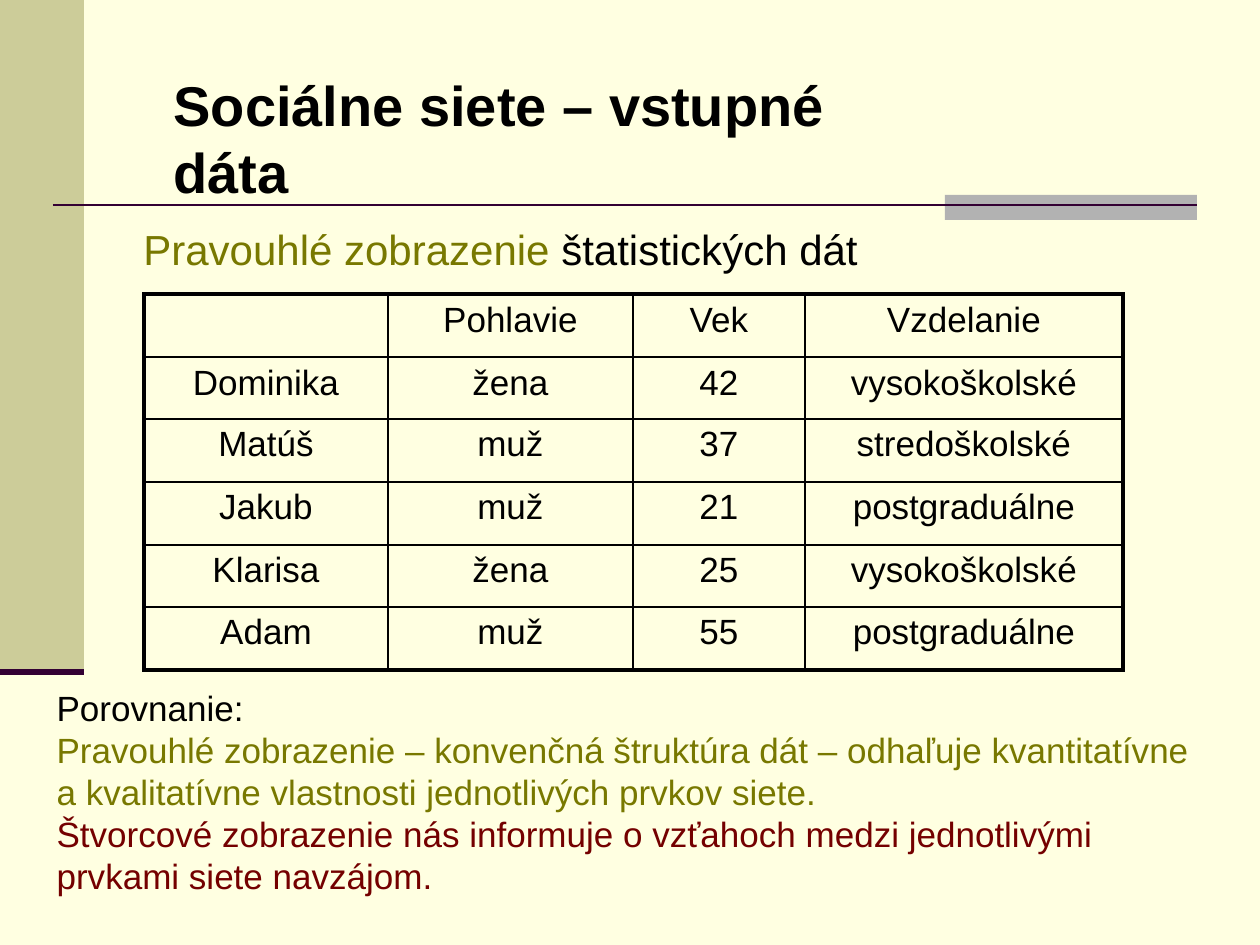
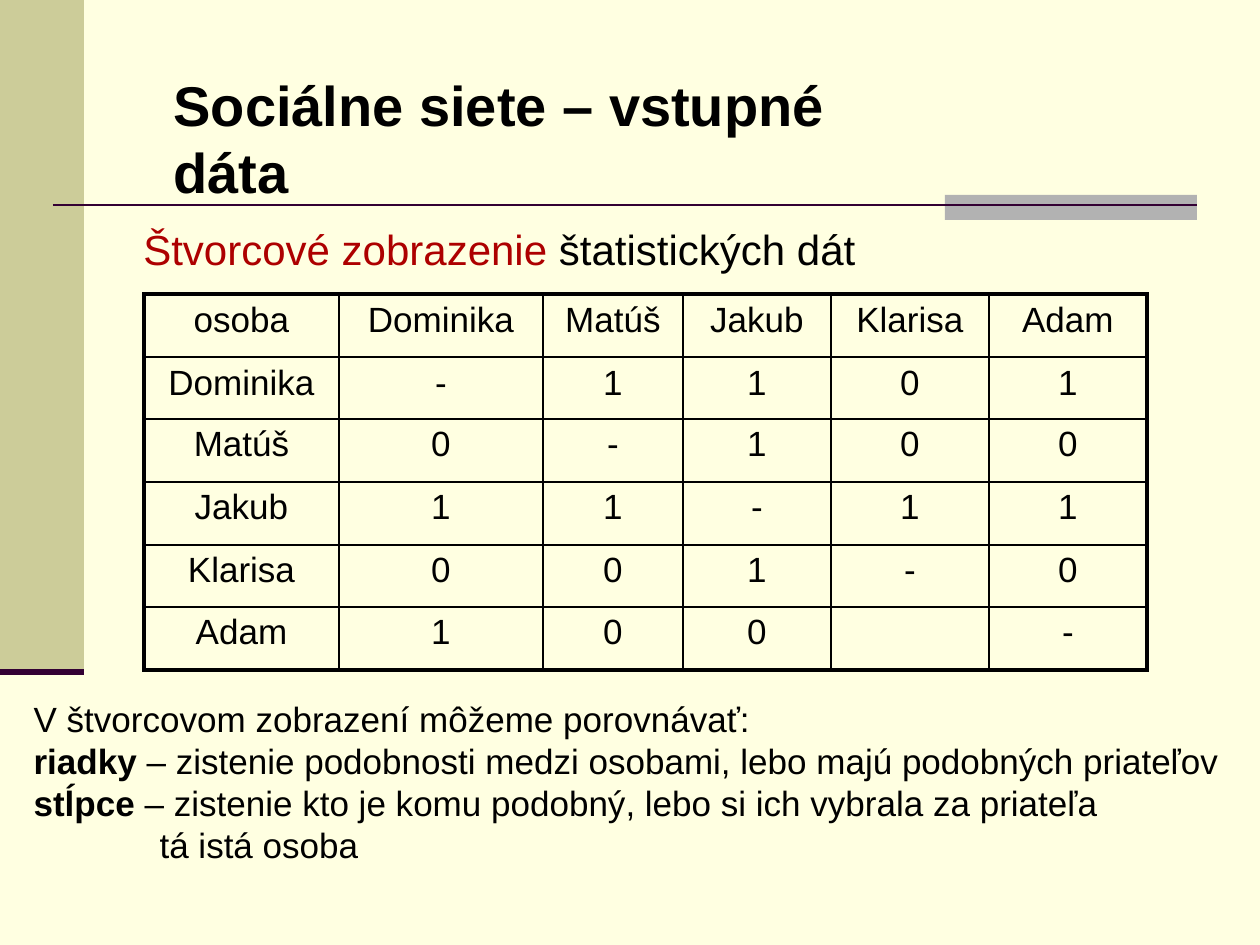
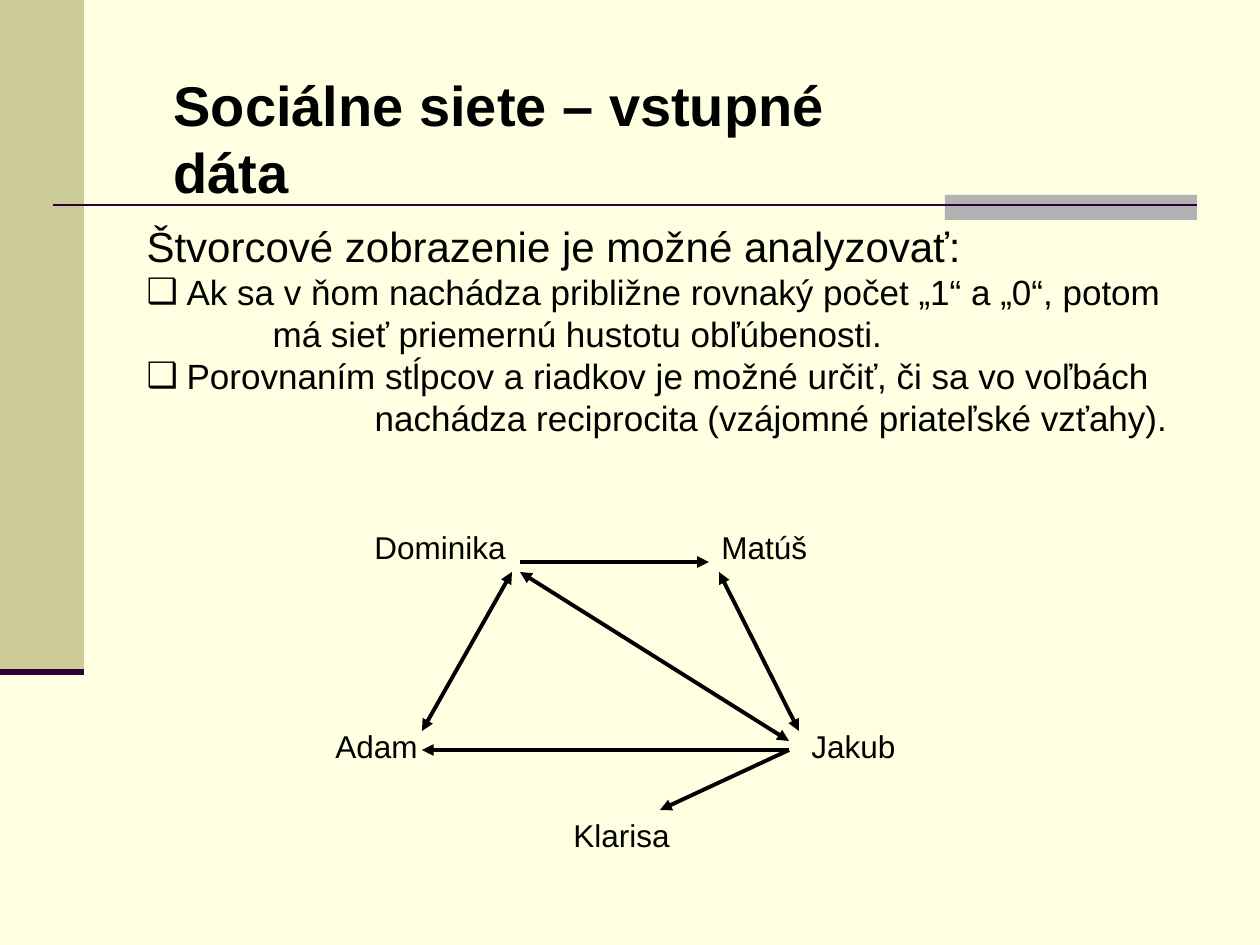
from lxml import etree
from pptx import Presentation
from pptx.dml.color import RGBColor
from pptx.enum.shapes import MSO_CONNECTOR, MSO_SHAPE
from pptx.enum.text import MSO_ANCHOR, MSO_AUTO_SIZE, PP_ALIGN
from pptx.oxml.ns import qn
from pptx.util import Emu, Pt

STRAIGHT = MSO_CONNECTOR.STRAIGHT
RECT = MSO_SHAPE.RECTANGLE
TOP = MSO_ANCHOR.TOP
NO_FIT = MSO_AUTO_SIZE.NONE
LEFT, CENTER = PP_ALIGN.LEFT, PP_ALIGN.CENTER

CREAM = RGBColor(0xFF, 0xFF, 0xE1)
KHAKI = RGBColor(0xCC, 0xCC, 0x99)
GREY = RGBColor(0xB2, 0xB2, 0xB2)
PLUM = RGBColor(0x33, 0x00, 0x33)
BLACK = RGBColor(0x00, 0x00, 0x00)
OLIVE = RGBColor(0x78, 0x78, 0x00)
RED = RGBColor(0xAD, 0x00, 0x00)
MAROON = RGBColor(0x74, 0x00, 0x00)

FONT = "Arial"
TITLE = "Sociálne siete – vstupné dáta"
TITLE_BOX = (161, 64, 805, 135)
SUBTITLE_BOX = (131, 217, 741, 63)
TABLE_AT = (144, 294)
ROW_HEIGHTS = (63, 62, 63, 63, 62, 63)
THICK, THIN = 2.25, 1


def px(n):
    return Emu(round(n * 914400 / 126))


def write(p, text, size=20, color=BLACK, bold=False):
    r = p.add_run()
    r.text = text
    r.font.name = FONT
    r.font.size = Pt(size)
    r.font.bold = bold
    r.font.color.rgb = color


def place(sp, box):
    sp.left, sp.top, sp.width, sp.height = map(px, box)


def prepare(tf, wrap=True):
    tf.word_wrap = wrap
    tf.auto_size = NO_FIT
    tf.vertical_anchor = TOP
    return tf


def fill_body(sp, box, paragraphs):
    place(sp, box)
    tf = prepare(sp.text_frame)
    for i, (runs, left, bullet) in enumerate(paragraphs):
        p = tf.add_paragraph() if i else tf.paragraphs[0]
        p.alignment = LEFT
        p.space_before = Pt(0)
        pPr = p._p.get_or_add_pPr()
        pPr.set("marL", str(px(left)))
        pPr.set("indent", str(px(-left if bullet else 0)))
        if bullet:
            etree.SubElement(pPr, qn("a:buChar")).set("char", bullet)
        else:
            etree.SubElement(pPr, qn("a:buNone"))
        for text, fmt in runs:
            write(p, text, **fmt)


def add_label(s, box, runs):
    tf = prepare(s.shapes.add_textbox(*map(px, box)).text_frame, wrap=False)
    for text, fmt in runs:
        write(tf.paragraphs[0], text, **fmt)


def add_line(s, x1, y1, x2, y2, color=BLACK, width=THICK, ends=()):
    sp = s.shapes.add_connector(STRAIGHT, px(x1), px(y1), px(x2), px(y2))
    sp.line.color.rgb = color
    sp.line.width = Pt(width)
    ln = sp.line._get_or_add_ln()
    for end in ends:
        etree.SubElement(ln, qn(f"a:{end}")).set("type", "triangle")
    etree.SubElement(sp._element.spPr, qn("a:effectLst"))
    return sp


def add_band(s, box, color):
    sp = s.shapes.add_shape(RECT, *map(px, box))
    sp.shadow.inherit = False
    sp.fill.solid()
    sp.fill.fore_color.rgb = color
    sp.line.fill.background()
    return sp


def decorate_layout(layout, s):
    layout.background.fill.solid()
    layout.background.fill.fore_color.rgb = CREAM
    parts = [
        add_band(s, (0, 0, 84, 672), KHAKI),
        add_band(s, (945, 195, 252, 25), GREY),
        add_line(s, 53, 205, 1197, 205, PLUM, 1.5),
        add_line(s, 0, 672, 84, 672, PLUM, 3.5),
    ]
    for i, sp in enumerate(parts, 20):
        sp.element.xpath(".//p:cNvPr")[0].set("id", str(i))
        layout.shapes.element.append(sp.element)


def add_titled_slide(prs, layout):
    s = prs.slides.add_slide(layout)
    place(s.shapes.title, TITLE_BOX)
    tf = prepare(s.shapes.title.text_frame)
    tf.margin_right = px(40)
    tf.paragraphs[0].alignment = LEFT
    write(tf.paragraphs[0], TITLE, size=32, bold=True)
    return s


def set_border(cell, side, width):
    tcPr = cell._tc.get_or_add_tcPr()
    ln = etree.SubElement(tcPr, qn(f"a:{side}"), w=str(Pt(width)))
    fill = etree.SubElement(ln, qn("a:solidFill"))
    etree.SubElement(fill, qn("a:srgbClr")).set("val", str(BLACK))


def add_grid(s, at, widths, rows):
    x, y = at
    box = (x, y, sum(widths), sum(ROW_HEIGHTS))
    table = s.shapes.add_table(len(rows), len(widths), *map(px, box)).table
    table.first_row = table.horz_banding = False
    for column, width in zip(table.columns, widths):
        column.width = px(width)
    for row, height in zip(table.rows, ROW_HEIGHTS):
        row.height = px(height)
    last_row, last_col = len(rows) - 1, len(widths) - 1
    for i, row in enumerate(rows):
        for j, text in enumerate(row):
            cell = table.cell(i, j)
            edges = {"lnL": j == 0, "lnR": j == last_col,
                     "lnT": i == 0, "lnB": i == last_row}
            for side, outer in edges.items():
                set_border(cell, side, THICK if outer else THIN)
            cell.fill.background()
            if text:
                p = cell.text_frame.paragraphs[0]
                p.alignment = CENTER
                p.space_before = Pt(4)
                write(p, text)


def add_table_slide(prs, layout, kind, color, widths, rows, body_box, body):
    s = add_titled_slide(prs, layout)
    add_label(s, SUBTITLE_BOX, [(kind + " ", dict(size=24, color=color)),
                                ("štatistických dát", dict(size=24))])
    add_grid(s, TABLE_AT, widths, rows)
    fill_body(s.placeholders[1], body_box, body)
    return s


def add_friend_graph(s, x, y):
    names = [("Dominika", 39, 0, 156), ("Matúš", 386, 0, 111),
             ("Jakub", 476, 199, 110), ("Adam", 0, 199, 107),
             ("Klarisa", 238, 288, 122)]
    for name, dx, dy, width in names:
        add_label(s, (x + dx, y + dy, width, 50), [(name, dict(size=18))])
    one_way, mutual = ("tailEnd",), ("headEnd", "tailEnd")
    arrows = [(197, 40, 386, 40, one_way), (466, 228, 337, 288, one_way),
              (466, 228, 99, 228, one_way), (99, 209, 189, 50, mutual),
              (197, 50, 466, 219, mutual), (396, 50, 476, 209, mutual)]
    for x1, y1, x2, y2, ends in arrows:
        add_line(s, x + x1, y + y1, x + x2, y + y2, ends=ends)


def add_graph_slide(prs, layout):
    s = add_titled_slide(prs, layout)
    fill_body(s.placeholders[1], (134, 214, 1062, 233), [
        ([("Štvorcové zobrazenie je možné analyzovať:", dict(size=24))], 0, None),
        ([("Ak sa v ňom nachádza približne rovnaký počet „1“ a „0“, potom", {})], 40, "❑"),
        ([("má sieť priemernú hustotu obľúbenosti.", {})], 126, None),
        ([("Porovnaním stĺpcov a riadkov je možné určiť, či sa vo voľbách", {})], 40, "❑"),
        ([("nachádza reciprocita (vzájomné priateľské vzťahy).", {})], 228, None),
    ])
    add_friend_graph(s, 323, 522)


def main():
    prs = Presentation()
    prs.slide_width, prs.slide_height = px(1260), px(945)
    layout = prs.slide_layouts[1]
    people = ["Dominika", "Matúš", "Jakub", "Klarisa", "Adam"]

    traits = [("žena", "42", "vysokoškolské"), ("muž", "37", "stredoškolské"),
              ("muž", "21", "postgraduálne"), ("žena", "25", "vysokoškolské"),
              ("muž", "55", "postgraduálne")]
    s = add_table_slide(
        prs, layout, "Pravouhlé zobrazenie", OLIVE, (244, 245, 172, 318),
        [("", "Pohlavie", "Vek", "Vzdelanie")]
        + [(name, *trait) for name, trait in zip(people, traits)],
        (44, 680, 1183, 265), [
            ([("Porovnanie:", {})], 0, None),
            ([("Pravouhlé zobrazenie – konvenčná štruktúra dát – odhaľuje "
               "kvantitatívne a kvalitatívne vlastnosti jednotlivých prvkov siete.",
               dict(color=OLIVE))], 0, None),
            ([("Štvorcové zobrazenie nás informuje o vzťahoch medzi jednotlivými "
               "prvkami siete navzájom.", dict(color=MAROON))], 0, None),
        ])
    decorate_layout(layout, s)

    choices = ["-1101", "0-100", "11-11", "001-0", ("1", "0", "0", "", "-")]
    add_table_slide(
        prs, layout, "Štvorcové zobrazenie", RED, (195, 204, 140, 148, 158, 158),
        [("osoba", *people)]
        + [(name, *choice) for name, choice in zip(people, choices)],
        (21, 691, 1227, 223), [
            ([("V štvorcovom zobrazení môžeme porovnávať:", {})], 0, None),
            ([("riadky", dict(bold=True)),
              (" – zistenie podobnosti medzi osobami, lebo majú podobných priateľov", {})],
             0, None),
            ([("stĺpce", dict(bold=True)),
              (" – zistenie kto je komu podobný, lebo si ich vybrala za priateľa", {})],
             0, None),
            ([("tá istá osoba", {})], 126, None),
        ])

    add_graph_slide(prs, layout)
    prs.save("out.pptx")


if __name__ == "__main__":
    main()
